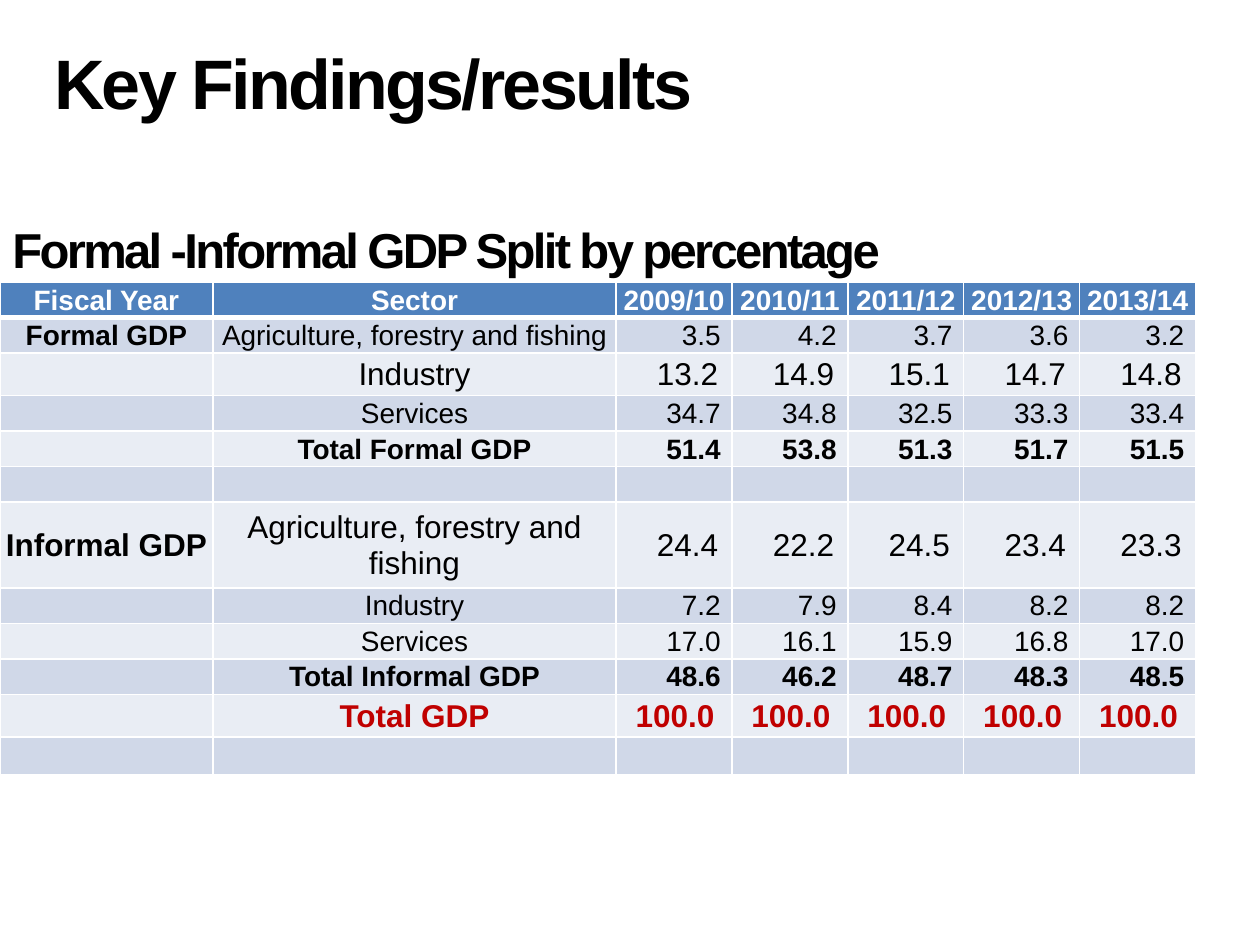
from dataclasses import dataclass
from lxml import etree
from pptx import Presentation
from pptx.dml.color import RGBColor
from pptx.enum.text import MSO_ANCHOR, PP_ALIGN
from pptx.oxml.ns import qn
from pptx.util import Inches, Pt

CENTER, RIGHT, LEFT = PP_ALIGN.CENTER, PP_ALIGN.RIGHT, PP_ALIGN.LEFT
MIDDLE = MSO_ANCHOR.MIDDLE


@dataclass(frozen=True)
class Theme:
    font: str = "Arial"
    ink: str = "000000"
    white: str = "FFFFFF"
    accent: str = "C00000"
    header: str = "4F81BD"
    bands: tuple = ("E9EDF4", "D0D8E8")
    title: int = 40
    subtitle: int = 28
    body: int = 16
    large: int = 18
    tracking: float = -1.5


theme = Theme()


def add_span(para, text, size, color, bold, align, tracking=0):
    para.alignment = align
    span = para.add_run()
    span.text = text
    span.font.name = theme.font
    span.font.size = Pt(size)
    span.font.bold = bold
    span.font.color.rgb = RGBColor.from_string(color)
    if tracking:
        span._r.get_or_add_rPr().set("spc", str(int(tracking * 100)))


def add_border(cell, side, width):
    line = etree.SubElement(cell._tc.get_or_add_tcPr(), qn(f"a:ln{side}"), w=str(Pt(width)))
    fill = etree.SubElement(line, qn("a:solidFill"))
    etree.SubElement(fill, qn("a:srgbClr"), val=theme.white)


deck = Presentation()
deck.slide_width, deck.slide_height = Inches(10), Inches(7.5)
page = deck.slides.add_slide(deck.slide_layouts[5])

title = page.shapes.title
title.left, title.top = Inches(0.25), Inches(0.19)
title.width, title.height = Inches(5.42), Inches(0.91)
title.text_frame.vertical_anchor = MIDDLE
add_span(title.text_frame.paragraphs[0], "Key Findings/results",
         theme.title, theme.ink, True, CENTER, theme.tracking)

label_width, sector_width, year_width = 1.69, 3.2, 0.92
years = ["2009/10", "2010/11", "2011/12", "2012/13", "2013/14"]
column_widths = [label_width, sector_width] + [year_width] * len(years)
blank = [""] * len(years)
regular, tall, double, last = 0.28, 0.34, 0.68, 0.3
body, large, ink = theme.body, theme.large, theme.ink

rows = [
    ("Fiscal Year", "Sector", years, body, True, theme.white, regular),
    ("Formal GDP", "Agriculture, forestry and fishing",
     ["3.5", "4.2", "3.7", "3.6", "3.2"], body, False, ink, regular),
    ("", "Industry", ["13.2", "14.9", "15.1", "14.7", "14.8"], large, False, ink, tall),
    ("", "Services", ["34.7", "34.8", "32.5", "33.3", "33.4"], body, False, ink, regular),
    ("", "Total Formal GDP", ["51.4", "53.8", "51.3", "51.7", "51.5"], body, True, ink, regular),
    ("", "", blank, body, False, ink, regular),
    ("Informal GDP", "Agriculture, forestry and fishing",
     ["24.4", "22.2", "24.5", "23.4", "23.3"], large, False, ink, double),
    ("", "Industry", ["7.2", "7.9", "8.4", "8.2", "8.2"], body, False, ink, regular),
    ("", "Services", ["17.0", "16.1", "15.9", "16.8", "17.0"], body, False, ink, regular),
    ("", "Total Informal GDP", ["48.6", "46.2", "48.7", "48.3", "48.5"], body, True, ink, regular),
    ("", "Total GDP", ["100.0"] * len(years), large, True, theme.accent, tall),
    ("", "", blank, body, False, ink, last),
]

table = page.shapes.add_table(
    len(rows), len(column_widths), 0, Inches(2.24),
    Inches(sum(column_widths)), Inches(sum(row[-1] for row in rows))).table
for column, width in zip(table.columns, column_widths):
    column.width = Inches(width)

for row_index, (label, sector, values, size, bold, color, height) in enumerate(rows):
    table.rows[row_index].height = Inches(height)
    is_header = row_index == 0
    value_margin = 0.14 if color == theme.accent else 0.11 if size == large else 0.09
    for column_index, text in enumerate([label, sector, *values]):
        cell = table.cell(row_index, column_index)
        is_value = column_index > 1 and not is_header
        cell.vertical_anchor = MIDDLE
        cell.margin_left = cell.margin_top = Inches(0.01)
        cell.margin_right = Inches(value_margin if is_value else 0.01)
        cell.margin_bottom = 0
        for side in "LRTB":
            thick = (is_header and side == "B") or (row_index == 1 and side == "T")
            add_border(cell, side, 3 if thick else 1)
        cell.fill.solid()
        cell.fill.fore_color.rgb = RGBColor.from_string(
            theme.header if is_header else theme.bands[row_index % 2])
        para = cell.text_frame.paragraphs[0]
        if text:
            add_span(para, text, size, color, bold or column_index == 0,
                     RIGHT if is_value else CENTER)
        else:
            etree.SubElement(para._p, qn("a:endParaRPr"), sz=str(size * 100))

subtitle = page.shapes.add_textbox(0, Inches(1.69), Inches(9.5), Inches(0.55))
subtitle.text_frame.word_wrap = True
add_span(subtitle.text_frame.paragraphs[0], "Formal -Informal GDP Split by percentage",
         theme.subtitle, theme.ink, True, LEFT, theme.tracking)

deck.save("out.pptx")
